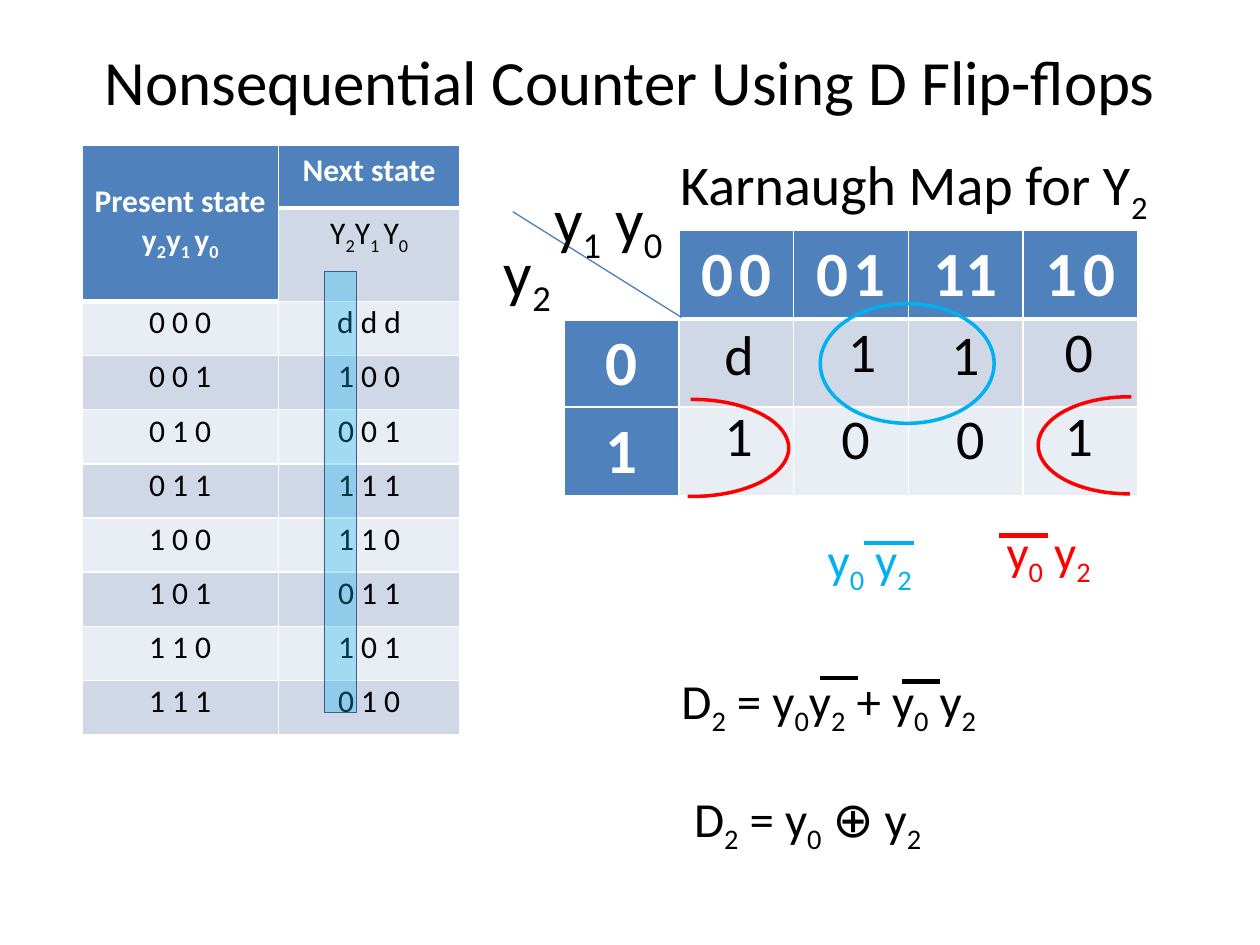
"""Build the slide on a nonsequential counter with its Karnaugh map for Y2."""
from dataclasses import dataclass
from typing import Any, NamedTuple

from lxml import etree
from pptx import Presentation, util as u
from pptx.dml.color import RGBColor
from pptx.enum import shapes, text
from pptx.oxml.ns import qn


@dataclass(frozen=True)
class Theme:
    font: str = "Calibri"
    black: str = "000000"
    white: str = "FFFFFF"
    header: str = "4F81BD"
    bands: tuple[str, str] = ("E9EDF4", "D0D8E8")
    blue: str = "00B0F0"
    red: str = "FF0000"
    axis: str = "4B7EBC"
    outline: str = "3A5F8C"
    heading: int = 36
    large: int = 32
    formula: int = 28
    body: int = 18
    gap: int = 14
    bar: float = 2.5
    loop: float = 2


T = Theme()


class Label(NamedTuple):
    x: float
    y: float
    w: float
    h: float
    words: str
    size: int
    color: str = T.black
    centred: bool = False


class Line(NamedTuple):
    x1: float
    y1: float
    x2: float
    y2: float
    color: str
    width: float


class Outline(NamedTuple):
    kind: Any
    x: float
    y: float
    w: float
    h: float
    color: str
    width: float
    angles: tuple[float, ...] = ()
    flip: bool = False


class Cell(NamedTuple):
    words: str
    fill: str
    size: int = T.body
    header: bool = False
    heavy: bool = False
    tight: bool = False


def rgb(color: str) -> RGBColor:
    return RGBColor.from_string(color)


def write(tf: Any, words: str, size: int, color: str, bold: bool, centred: bool) -> None:
    """Fill a frame; "|" parts the runs, "_" lowers one, a lone space is a narrow gap."""
    for i, line in enumerate(words.split("\n")):
        p = tf.add_paragraph() if i else tf.paragraphs[0]
        p.alignment = text.PP_ALIGN.CENTER if centred else text.PP_ALIGN.LEFT
        for piece in filter(None, line.split("|")):
            r = p.add_run()
            r.text = piece.removeprefix("_")
            points = T.gap if piece == " " else size
            fmt = {"name": T.font, "size": u.Pt(points), "bold": bold}
            for key, value in fmt.items():
                setattr(r.font, key, value)
            r.font.color.rgb = rgb(color)
            if piece.startswith("_"):
                r._r.get_or_add_rPr().set("baseline", "-25000")


def add_label(s: Any, label: Label) -> None:
    sp = s.shapes.add_textbox(*map(u.Inches, label[:4]))
    tf = sp.text_frame
    tf.word_wrap = True
    if label.centred:
        tf.vertical_anchor = text.MSO_ANCHOR.MIDDLE
    write(tf, label.words, label.size, label.color, False, label.centred)


def add_line(s: Any, line: Line) -> None:
    cx = s.shapes.add_connector(shapes.MSO_CONNECTOR.STRAIGHT, *map(u.Inches, line[:4]))
    cx.line.color.rgb = rgb(line.color)
    cx.line.width = u.Pt(line.width)
    etree.SubElement(cx._element.spPr, qn("a:effectLst"))


def add_outline(s: Any, o: Outline) -> Any:
    sp = s.shapes.add_shape(o.kind, *map(u.Inches, o[1:5]))
    sp.shadow.inherit = False
    sp.fill.background()
    sp.line.color.rgb = rgb(o.color)
    sp.line.width = u.Pt(o.width)
    for i, degrees in enumerate(o.angles):
        sp.adjustments[i] = degrees * 0.6
    if o.flip:
        sp._element.spPr.xfrm.set("flipH", "1")
    return sp


def style_cell(c: Any, cell: Cell) -> None:
    tc_pr = c._tc.get_or_add_tcPr()
    for side in "LRTB":
        width = 3 if cell.heavy and side == "B" else 1
        ln = etree.SubElement(tc_pr, qn(f"a:ln{side}"), w=str(u.Pt(width)))
        fill = etree.SubElement(ln, qn("a:solidFill"))
        etree.SubElement(fill, qn("a:srgbClr"), val=T.white)
    c.fill.solid()
    c.fill.fore_color.rgb = rgb(cell.fill)
    if cell.header and "Next" not in cell.words:
        c.vertical_anchor = text.MSO_ANCHOR.MIDDLE
    if cell.tight:
        c.margin_left = c.margin_right = u.Inches(0.05)
        c.margin_top = c.margin_bottom = u.Inches(0.02)
    color = T.white if cell.header else T.black
    write(c.text_frame, cell.words, cell.size, color, cell.header, True)


def add_grid(s: Any, x: float, y: float, cols: list[float], rows: list[float],
             cells: list[list[Cell]]) -> Any:
    box = map(u.Inches, (x, y, sum(cols), sum(rows)))
    tbl = s.shapes.add_table(len(rows), len(cols), *box).table
    tbl.first_row = tbl.horz_banding = False
    for col, width in zip(tbl.columns, cols):
        col.width = u.Inches(width)
    for row, height, items in zip(tbl.rows, rows, cells):
        row.height = u.Inches(height)
        for c, cell in zip(row.cells, items):
            style_cell(c, cell)
    return tbl


def add_state_table(s: Any) -> None:
    following = ["d d d", "1 0 0", "0 0 1", "1 1 1", "1 1 0", "0 1 1", "1 0 1", "0 1 0"]
    cells = [
        [Cell("Present state\ny|_2|y|_1 |y|_0", T.header, header=True, heavy=True),
         Cell("Next state", T.header, header=True, heavy=True)],
        [Cell("", T.header, heavy=True), Cell("Y|_2|Y|_1 |Y|_0", T.bands[1])],
    ]
    for n, after in enumerate(following):
        states = (" ".join(f"{n:03b}"), after)
        cells.append([Cell(state, T.bands[n % 2], tight=True) for state in states])
    tbl = add_grid(s, 0.65, 1.15, [1.56, 1.44], [0.5, 0.74] + [0.43] * 8, cells)
    tbl.cell(0, 0).merge(tbl.cell(1, 0))


def add_karnaugh_grid(s: Any) -> None:
    heads = ["0| |0", "0| |1", "11", "1| |0"]
    cells = [[Cell("", T.white, heavy=True)]
             + [Cell(h, T.header, T.heading, True, True) for h in heads]]
    for label, band in zip("01", reversed(T.bands)):
        cells.append([Cell(label, T.header, T.heading, True)] + [Cell("", band)] * 4)
    add_grid(s, 4.48, 1.83, [0.91] * 5, [0.7] * 3, cells)


def main() -> None:
    prs = Presentation()
    prs.slide_width, prs.slide_height = u.Inches(10), u.Inches(7.5)
    s = prs.slides.add_slide(prs.slide_layouts[6])

    add_label(s, Label(0.5, 0.17, 9, 0.94, "Nonsequential Counter Using D Flip-flops",
                       T.heading, centred=True))
    add_state_table(s)
    add_label(s, Label(5.3, 1.14, 4.47, 0.64, "Karnaugh Map for Y|_2", T.large))
    marker = add_outline(s, Outline(shapes.MSO_SHAPE.RECTANGLE, 2.57, 2.15, 0.26, 3.5,
                                    T.outline, 0.25))
    marker.fill.solid()
    marker.fill.fore_color.rgb = rgb(T.blue)
    tint = marker._element.spPr.find(qn("a:solidFill"))[0]
    etree.SubElement(tint, qn("a:alpha"), val="30000")
    add_karnaugh_grid(s)

    digits = [("d", 5.65, 2.49), ("1", 6.63, 2.46), ("1", 7.45, 2.49), ("0", 8.35, 2.46),
              ("1", 5.65, 3.13), ("0", 6.58, 3.15), ("0", 7.49, 3.15), ("1", 8.35, 3.13)]
    labels = [Label(x, y, 0.48, 0.64, digit, T.large) for digit, x, y in digits] + [
        Label(4.3, 1.38, 1.15, 0.71, "y|_1| y|_0", T.heading),
        Label(3.9, 1.8, 1.19, 0.71, "y|_2", T.heading),
        Label(6.47, 4.15, 0.98, 0.57, "y|_0| y|_2", T.formula, T.blue),
        Label(7.89, 4.09, 0.95, 0.57, "y|_0| y|_2", T.formula, T.red),
        Label(5.31, 5.27, 2.71, 0.57, "D|_2| = y|_0|y|_2| + y|_0| y|_2", T.formula),
        Label(5.41, 6.21, 3.28, 0.57, "D|_2| = y|_0| ⊕ y|_2", T.formula),
    ]
    lines = [Line(5.41, 2.52, 4.07, 1.68, T.axis, 0.75)]
    for x, y, w, color in [(6.86, 4.31, 0.39, T.blue), (7.93, 4.25, 0.39, T.red),
                           (6.51, 5.38, 0.3, T.black), (7.16, 5.41, 0.3, T.black)]:
        lines.append(Line(x, y, x + w, y, color, T.bar))
    arc = shapes.MSO_SHAPE.ARC
    loops = [
        Outline(shapes.MSO_SHAPE.OVAL, 6.51, 2.41, 1.38, 0.95, T.blue, T.loop),
        Outline(arc, 4.73, 3.17, 1.53, 0.77, T.red, T.loop, (267.9, 95.6)),
        Outline(arc, 8.24, 3.15, 1.43, 0.77, T.red, T.loop, (266.4, 91.8), True),
    ]
    for draw, items in ((add_line, lines), (add_label, labels), (add_outline, loops)):
        for item in items:
            draw(s, item)
    prs.save("out.pptx")


if __name__ == "__main__":
    main()
